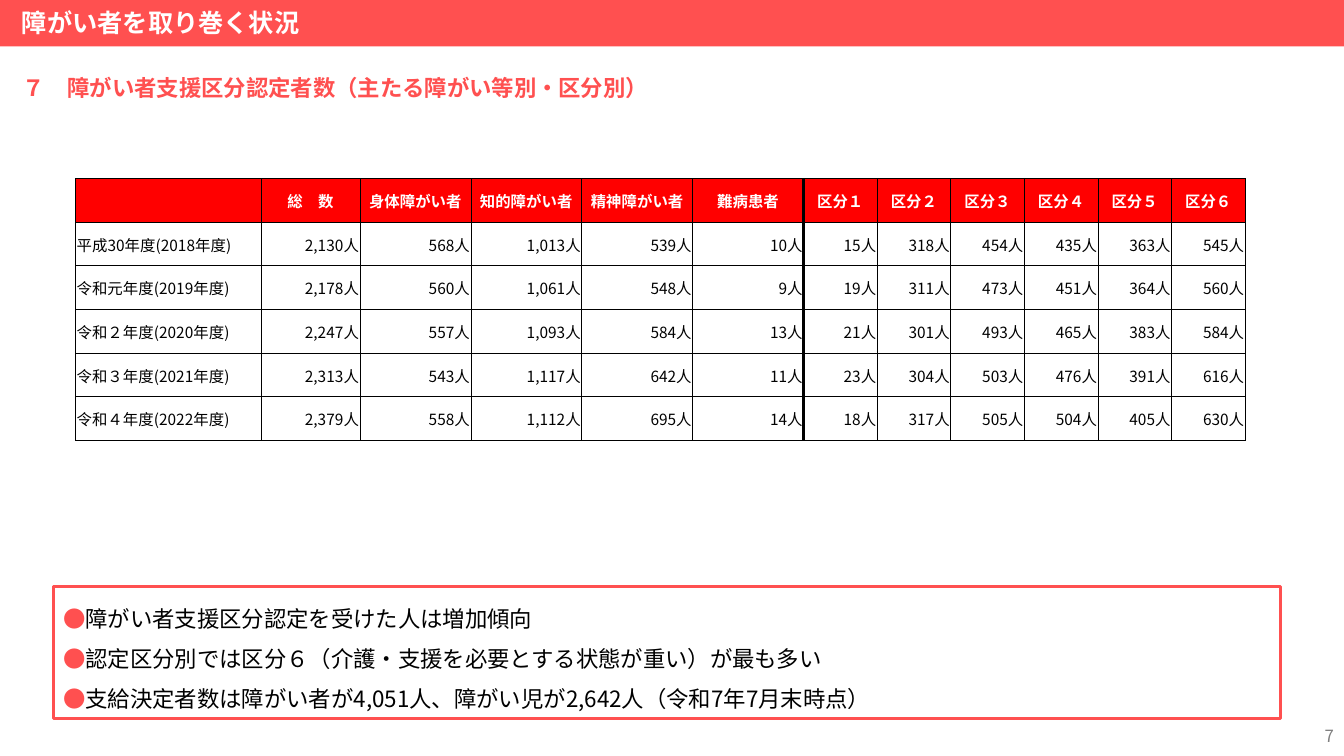
from lxml.etree import SubElement
from pptx import Presentation
from pptx.dml.color import RGBColor
from pptx.enum.shapes import MSO_SHAPE
from pptx.enum.text import MSO_ANCHOR, PP_ALIGN
from pptx.oxml.ns import qn
from pptx.util import Inches, Pt

FONT = "Noto Sans CJK JP"
COLORS = {
    "coral": "FF5050",
    "header": "FF0000",
    "white": "FFFFFF",
    "black": "000000",
    "gray": "808080",
}


def add_run(paragraph, text, size, color, bold=False):
    run = paragraph.add_run()
    run.text = text
    run.font.size = Pt(size)
    run.font.bold = bold
    run.font.color.rgb = RGBColor.from_string(COLORS[color])
    run.font.name = FONT
    SubElement(run.font._element, qn("a:ea"), typeface=FONT)


def add_border(cell, side, width):
    line = SubElement(cell._tc.get_or_add_tcPr(), qn(f"a:ln{side}"), w=str(Pt(width)))
    fill = SubElement(line, qn("a:solidFill"))
    SubElement(fill, qn("a:srgbClr"), val=COLORS["black"])


prs = Presentation()
prs.slide_width, prs.slide_height = Inches(13.33), Inches(7.5)
slide = prs.slides.add_slide(prs.slide_layouts[6])

# Title band
band = slide.shapes.add_shape(MSO_SHAPE.RECTANGLE, 0, 0, Inches(13.33), Inches(0.46))
band.shadow.inherit = False
band.fill.solid()
band.fill.fore_color.rgb = RGBColor.from_string(COLORS["coral"])
band.line.fill.background()

# Title, section heading and page number
labels = [
    ("障がい者を取り巻く状況", 0.12, 0.02, 12.57, 0.4, 18, "white", True, PP_ALIGN.LEFT, MSO_ANCHOR.TOP),
    ("７　障がい者支援区分認定者数（主たる障がい等別・区分別）",
     0.13, 0.69, 12.57, 0.37, 16, "coral", True, PP_ALIGN.LEFT, MSO_ANCHOR.TOP),
    ("7", 10.33, 7.1, 3, 0.4, 12, "gray", False, PP_ALIGN.RIGHT, MSO_ANCHOR.MIDDLE),
]
for text, left, top, width, height, size, color, bold, align, anchor in labels:
    label = slide.shapes.add_textbox(Inches(left), Inches(top), Inches(width), Inches(height))
    label.text_frame.word_wrap = True
    label.text_frame.vertical_anchor = anchor
    paragraph = label.text_frame.paragraphs[0]
    paragraph.alignment = align
    add_run(paragraph, text, size, color, bold)

# Summary box
summary = slide.shapes.add_shape(
    MSO_SHAPE.RECTANGLE, Inches(0.53), Inches(5.82), Inches(12.17), Inches(1.31))
summary.shadow.inherit = False
summary.fill.background()
summary.line.color.rgb = RGBColor.from_string(COLORS["coral"])
summary.line.width = Pt(2.25)
summary.text_frame.word_wrap = True
summary.text_frame.vertical_anchor = MSO_ANCHOR.TOP
points = [
    "障がい者支援区分認定を受けた人は増加傾向",
    "認定区分別では区分６（介護・支援を必要とする状態が重い）が最も多い",
    "支給決定者数は障がい者が4,051人、障がい児が2,642人（令和7年7月末時点）",
]
for index, point in enumerate(points):
    paragraph = summary.text_frame.add_paragraph() if index else summary.text_frame.paragraphs[0]
    paragraph.alignment = PP_ALIGN.LEFT
    paragraph.line_spacing = 1.5
    add_run(paragraph, "●", 16, "coral")
    add_run(paragraph, point, 16, "black")

# Table content
headings = ["", "総　数", "身体障がい者", "知的障がい者", "精神障がい者", "難病患者",
            "区分１", "区分２", "区分３", "区分４", "区分５", "区分６"]
years = [
    ("平成30年度(2018年度)", 2130, 568, 1013, 539, 10, 15, 318, 454, 435, 363, 545),
    ("令和元年度(2019年度)", 2178, 560, 1061, 548, 9, 19, 311, 473, 451, 364, 560),
    ("令和２年度(2020年度)", 2247, 557, 1093, 584, 13, 21, 301, 493, 465, 383, 584),
    ("令和３年度(2021年度)", 2313, 543, 1117, 642, 11, 23, 304, 503, 476, 391, 616),
    ("令和４年度(2022年度)", 2379, 558, 1112, 695, 14, 18, 317, 505, 504, 405, 630),
]
rows = [headings] + [[year] + [f"{count:,}人" for count in counts] for year, *counts in years]
column_widths = [1.84, 0.98] + [1.1] * 4 + [0.73] * 6
LAST_DISABILITY = 5  # a thicker rule separates disabilities from levels

# Table
table = slide.shapes.add_table(
    len(rows), len(headings), Inches(0.75), Inches(1.77), Inches(11.59), Inches(2.6)).table
table.horz_banding = False
for column, width in zip(table.columns, column_widths):
    column.width = Inches(width)
for r, row in enumerate(rows):
    table.rows[r].height = Inches(2.6 / len(rows))
    for c, text in enumerate(row):
        cell = table.cell(r, c)
        cell.vertical_anchor = MSO_ANCHOR.MIDDLE
        cell.margin_left = cell.margin_top = cell.margin_right = Inches(0.01)
        cell.margin_bottom = 0
        add_border(cell, "L", 2 if c == LAST_DISABILITY + 1 else 0.5)
        add_border(cell, "R", 2 if c == LAST_DISABILITY else 0.5)
        add_border(cell, "T", 0.5)
        add_border(cell, "B", 0.5)
        paragraph = cell.text_frame.paragraphs[0]
        if r == 0:
            cell.fill.solid()
            cell.fill.fore_color.rgb = RGBColor.from_string(COLORS["header"])
            paragraph.alignment = PP_ALIGN.CENTER
        else:
            cell.fill.background()
            paragraph.alignment = PP_ALIGN.RIGHT if c else PP_ALIGN.LEFT
        if text:
            add_run(paragraph, text, 11, "black" if r else "white", r == 0)

prs.save("out.pptx")
